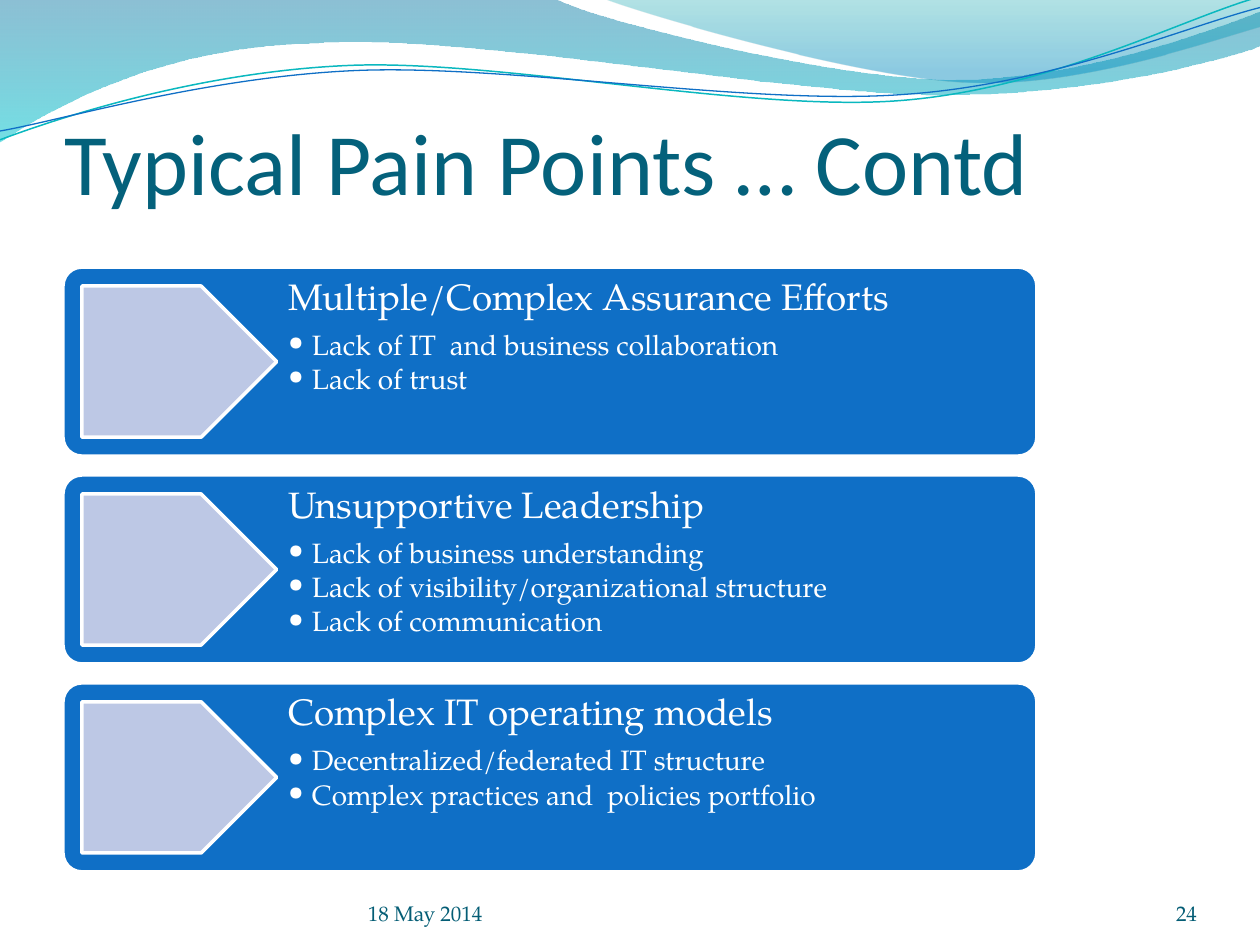
from lxml.etree import SubElement
from pptx import Presentation
from pptx.dml.color import RGBColor
from pptx.enum.shapes import MSO_SHAPE as Preset
from pptx.enum.text import MSO_ANCHOR as Anchor, PP_ALIGN as Align
from pptx.oxml.ns import qn
from pptx.util import Inches, Pt

WIDTH, HEIGHT = 10, 7.5
SERIF, SANS = "TeX Gyre Pagella", "Calibri"
BLUE, PALE, WHITE = "0F6FC6", "BDC8E5", "FFFFFF"
UNITS = 1000  # freeform units to the inch

# Each wave is a chain of points: two are a line's end, six a Bézier curve.
BANDS = [
    ([(0, 0), (4.4, -0.01), (4.76, 0.17, 6.64, 0.63, 7.58, 0.63),
      (8.53, 0.63, 9.58, 0.26, 10, 0.09), (10.01, 0.36),
      (9.83, 0.44, 8.7, 0.76, 7.46, 0.75), (6.22, 0.75, 3.82, 0.28, 2.57, 0.34),
      (1.29, 0.36, 0.46, 0.83, -0.01, 1.13), (0, 0)],
     [(0, "0074A1", 45), (1, "00C6CF", 55)]),
    ([(4.79, -0.01), (5.09, 0.11, 6.82, 0.62, 7.69, 0.65),
      (8.56, 0.69, 9.61, 0.32, 10, 0.21), (10, 0), (4.79, -0.01)],
     [(0, "00A1A9", 30), (0.8, "008BBF", 45)]),
]
RIPPLES = [
    ([(0, 1.11), (0.48, 0.93, 1.58, 0.57, 2.77, 0.52),
      (3.95, 0.47, 5.93, 0.89, 7.13, 0.8), (8.33, 0.71, 9.38, 0.15, 9.98, -0.02)],
     "0AB8BF", 0.85),
    ([(0, 1.04), (0.47, 0.96, 1.64, 0.61, 2.83, 0.56),
      (4.03, 0.51, 5.97, 0.84, 7.17, 0.75), (8.36, 0.67, 9.41, 0.21, 10, 0.06)],
     BLUE, 0.75),
]
PAIN_POINTS = [
    ("Multiple/Complex Assurance Efforts",
     ["Lack of IT  and business collaboration", "Lack of trust"]),
    ("Unsupportive Leadership",
     ["Lack of business understanding",
      "Lack of visibility/organizational structure", "Lack of communication"]),
    ("Complex IT operating models",
     ["Decentralized/federated IT structure",
      "Complex practices and  policies portfolio"]),
]


def color(value):
    return RGBColor.from_string(value)


def add_wave(slide, chain, close):
    """Draw the chain through all its points, then join each curve's three lines."""
    points = [(step[i] * UNITS, step[i + 1] * UNITS)
              for step in chain for i in range(0, len(step), 2)]
    builder = slide.shapes.build_freeform(*points[0], scale=Inches(1) / UNITS)
    builder.add_line_segments(points[1:], close=close)
    shape = builder.convert_to_shape()
    shape.shadow.inherit = False

    lines = iter(list(shape._element.iter(qn("a:lnTo"))))
    for step in chain[1:]:
        curve = next(lines)
        if len(step) == 6:
            curve.tag = qn("a:cubicBezTo")
            for _ in range(2):
                line = next(lines)
                curve.append(line[0])
                line.getparent().remove(line)
    return shape


def add_header_waves(slide):
    for chain, stops in BANDS:
        band = add_wave(slide, chain, True)
        band.line.fill.background()
        band.fill.gradient()
        band.fill.gradient_angle = 270
        for stop, (position, value, _) in zip(band.fill.gradient_stops, stops):
            stop.position = position
            stop.color.rgb = color(value)
        for tint, (_, _, opacity) in zip(band._element.spPr.iter(qn("a:srgbClr")), stops):
            SubElement(tint, qn("a:alpha"), val=str(opacity * 1000))
    for chain, value, width in RIPPLES:
        ripple = add_wave(slide, chain, False)
        ripple.fill.background()
        ripple.line.color.rgb = color(value)
        ripple.line.width = Pt(width)


def add_text_frame(slide, box, margins, anchor=Anchor.TOP):
    frame = slide.shapes.add_textbox(*map(Inches, box)).text_frame
    frame.word_wrap = True
    frame.vertical_anchor = anchor
    (frame.margin_left, frame.margin_top,
     frame.margin_right, frame.margin_bottom) = map(Inches, margins)
    return frame


def format_font(paragraph, size, value, name=SERIF):
    for run in paragraph.runs:
        run.font.size = Pt(size)
        run.font.name = name
        run.font.color.rgb = color(value)


def add_label(slide, box, text, size, value, name=SERIF, align=Align.LEFT, top=0):
    frame = add_text_frame(slide, box, (0, top, 0, 0), Anchor.BOTTOM)
    frame.text = text
    frame.paragraphs[0].alignment = align
    format_font(frame.paragraphs[0], size, value, name)


def add_block(slide, preset, box, fill):
    shape = slide.shapes.add_shape(preset, *map(Inches, box))
    shape.shadow.inherit = False
    shape.fill.solid()
    shape.fill.fore_color.rgb = color(fill)
    shape.line.color.rgb = color(WHITE)
    shape.line.width = Pt(2)
    return shape


def add_bullet(paragraph, indent):
    paragraph.level = 1
    properties = paragraph._p.get_or_add_pPr()
    properties.set("marL", str(Inches(indent)))
    properties.set("indent", str(-Inches(indent)))
    SubElement(properties, qn("a:buFont"), typeface=SERIF)
    SubElement(properties, qn("a:buChar"), char="•")


def add_pain_point(slide, box, heading, items):
    left, top, width, height = box
    inset = height / 10
    arrow_width = width * 0.2
    text_left = inset + arrow_width
    add_block(slide, Preset.ROUNDED_RECTANGLE, box, BLUE).adjustments[0] = 0.1

    frame = add_text_frame(slide, (left + text_left, top, width - text_left, height),
                           [0.09] * 4)
    frame.text = "\n".join([heading] + items)
    for i, paragraph in enumerate(frame.paragraphs):
        size, space = (16, 0.15) if i else (21, 0.35)
        paragraph.line_spacing = 0.9
        paragraph.space_after = Pt(size * space)
        format_font(paragraph, size, WHITE)
        if i:
            add_bullet(paragraph, 0.19)

    add_block(slide, Preset.PENTAGON,
              (left + inset, top + inset, arrow_width, height - 2 * inset), PALE)


def add_pain_points(slide, box):
    """Stack the cards in the box, with gaps a tenth as high as a card."""
    left, top, width, height = box
    count = len(PAIN_POINTS)
    card = height / (count + 0.1 * (count - 1))
    for row, (heading, items) in enumerate(PAIN_POINTS):
        add_pain_point(slide, (left, top + row * card * 1.1, width, card), heading, items)


def add_footer(slide, top, height):
    add_label(slide, (2.92, top, 3.67, height), "18 May 2014", 12, "045D75")
    add_label(slide, (8.67, top, 0.83, height), "24", 12, "045D75", align=Align.RIGHT)


def main():
    presentation = Presentation()
    presentation.slide_width, presentation.slide_height = Inches(WIDTH), Inches(HEIGHT)
    slide = presentation.slides.add_slide(presentation.slide_layouts[6])
    add_header_waves(slide)
    add_footer(slide, 6.95, 0.4)
    add_pain_points(slide, (0.5, 2.12, 7.73, 4.8))
    add_label(slide, (0.51, 0.44, 7.89, 1.25), "Typical Pain Points … Contd",
              50, "04617B", SANS, top=0.05)
    presentation.save("out.pptx")


if __name__ == "__main__":
    main()
